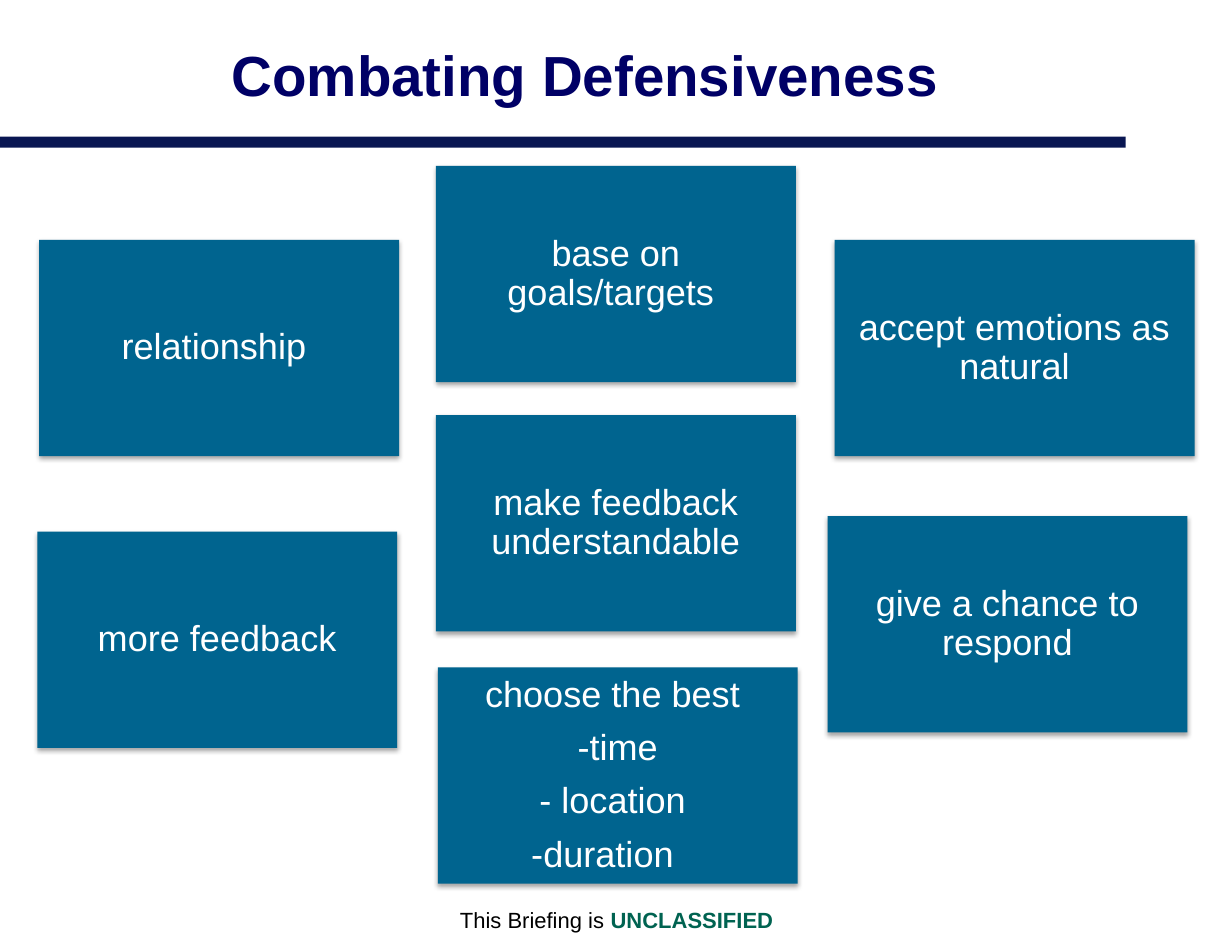
import dataclasses
import typing

import pptx
import pptx.dml.color
import pptx.enum.shapes
import pptx.enum.text
import pptx.oxml
import pptx.oxml.ns
import pptx.util

Cm = pptx.util.Cm
Pt = pptx.util.Pt


@dataclasses.dataclass(frozen=True)
class Theme:
    font: str = "Arial"
    title: str = "000066"
    bar: str = "091652"
    card: str = "00648F"
    card_text: str = "FFFFFF"
    marking: str = "006351"
    footer: str = "000000"
    title_size: float = 36
    card_size: float = 23
    footer_size: float = 14


@dataclasses.dataclass(frozen=True)
class Card:
    left: float
    top: float
    lines: tuple[str, ...]
    last_indent: float = 0


THEME = Theme()
CARD_WIDTH, CARD_HEIGHT = 8.09, 4.86
CARDS = (
    Card(0.88, 5.39, ("relationship ",)),
    Card(9.8, 3.73, ("base on goals/targets ",)),
    Card(18.76, 5.39, ("accept emotions as natural",)),
    Card(0.84, 11.95, ("more feedback",)),
    Card(9.8, 9.33, ("make feedback understandable",)),
    Card(18.6, 11.6, ("give a chance to respond",)),
    Card(9.84, 15, ("choose the best ", "-time", "- location ", "-duration"), 0.68),
)
CARD_SHADOW = (
    f'<a:effectLst {pptx.oxml.ns.nsdecls("a")}>'
    '<a:outerShdw blurRad="40000" dist="23000" dir="5400000" rotWithShape="0">'
    '<a:srgbClr val="000000"><a:alpha val="35000"/></a:srgbClr>'
    "</a:outerShdw></a:effectLst>"
)


def apply_format(target: typing.Any, values: dict[str, typing.Any]) -> None:
    for name, value in values.items():
        setattr(target, name, value)


def place(shape: typing.Any, left: float, top: float, width: float, height: float) -> None:
    apply_format(shape, {
        "left": Cm(left), "top": Cm(top), "width": Cm(width), "height": Cm(height),
    })


def add_span(para: typing.Any, text: str, size: float, colour: str, bold: bool = False) -> None:
    span = para.add_run()
    span.text = text
    apply_format(span.font, {"name": THEME.font, "size": Pt(size), "bold": bold})
    span.font.color.rgb = pptx.dml.color.RGBColor.from_string(colour)


def add_block(slide: typing.Any, left: float, top: float, width: float,
              height: float, colour: str) -> typing.Any:
    block = slide.shapes.add_shape(
        pptx.enum.shapes.MSO_SHAPE.RECTANGLE, Cm(left), Cm(top), Cm(width), Cm(height)
    )
    block.shadow.inherit = False
    block.fill.solid()
    block.fill.fore_color.rgb = pptx.dml.color.RGBColor.from_string(colour)
    block.line.fill.background()
    return block


def add_card(slide: typing.Any, card: Card) -> None:
    box = add_block(slide, card.left, card.top, CARD_WIDTH, CARD_HEIGHT, THEME.card)
    properties = box.element.spPr
    properties.replace(
        properties.find(pptx.oxml.ns.qn("a:effectLst")), pptx.oxml.parse_xml(CARD_SHADOW)
    )
    frame = box.text_frame
    apply_format(frame, {
        "word_wrap": True,
        "vertical_anchor": pptx.enum.text.MSO_ANCHOR.MIDDLE,
        "margin_left": Cm(0.25), "margin_right": Cm(0.25),
        "margin_top": Cm(0.25), "margin_bottom": Cm(0.25),
    })
    for index, line in enumerate(card.lines):
        para = frame.paragraphs[0] if index == 0 else frame.add_paragraph()
        apply_format(para, {
            "alignment": pptx.enum.text.PP_ALIGN.CENTER,
            "line_spacing": 0.9,
            "space_after": Pt(9.2),
        })
        add_span(para, line, THEME.card_size, THEME.card_text)
    if card.last_indent:
        para._p.get_or_add_pPr().set("marR", str(int(Cm(card.last_indent))))


def add_title(slide: typing.Any) -> None:
    title = slide.shapes.title
    place(title, 2.87, 0, 20.55, 3.3)
    apply_format(title.text_frame, {
        "word_wrap": True,
        "auto_size": pptx.enum.text.MSO_AUTO_SIZE.NONE,
        "vertical_anchor": pptx.enum.text.MSO_ANCHOR.MIDDLE,
    })
    para = title.text_frame.paragraphs[0]
    para.alignment = pptx.enum.text.PP_ALIGN.CENTER
    add_span(para, "Combating Defensiveness", THEME.title_size, THEME.title, True)


def add_footer(slide: typing.Any) -> None:
    box = slide.shapes.add_textbox(Cm(6.99), Cm(20.24), Cm(13.74), Cm(0.84))
    box.text_frame.word_wrap = True
    para = box.text_frame.paragraphs[0]
    para.alignment = pptx.enum.text.PP_ALIGN.CENTER
    add_span(para, "This Briefing is ", THEME.footer_size, THEME.footer)
    add_span(para, "UNCLASSIFIED", THEME.footer_size, THEME.marking, True)


def main() -> None:
    deck = pptx.Presentation()
    apply_format(deck, {"slide_width": Cm(27.69), "slide_height": Cm(21.08)})
    slide = deck.slides.add_slide(deck.slide_layouts[5])
    add_block(slide, 0, 3.07, 25.3, 0.25, THEME.bar)
    add_footer(slide)
    add_title(slide)
    for card in CARDS:
        add_card(slide, card)
    deck.save("out.pptx")


if __name__ == "__main__":
    main()
